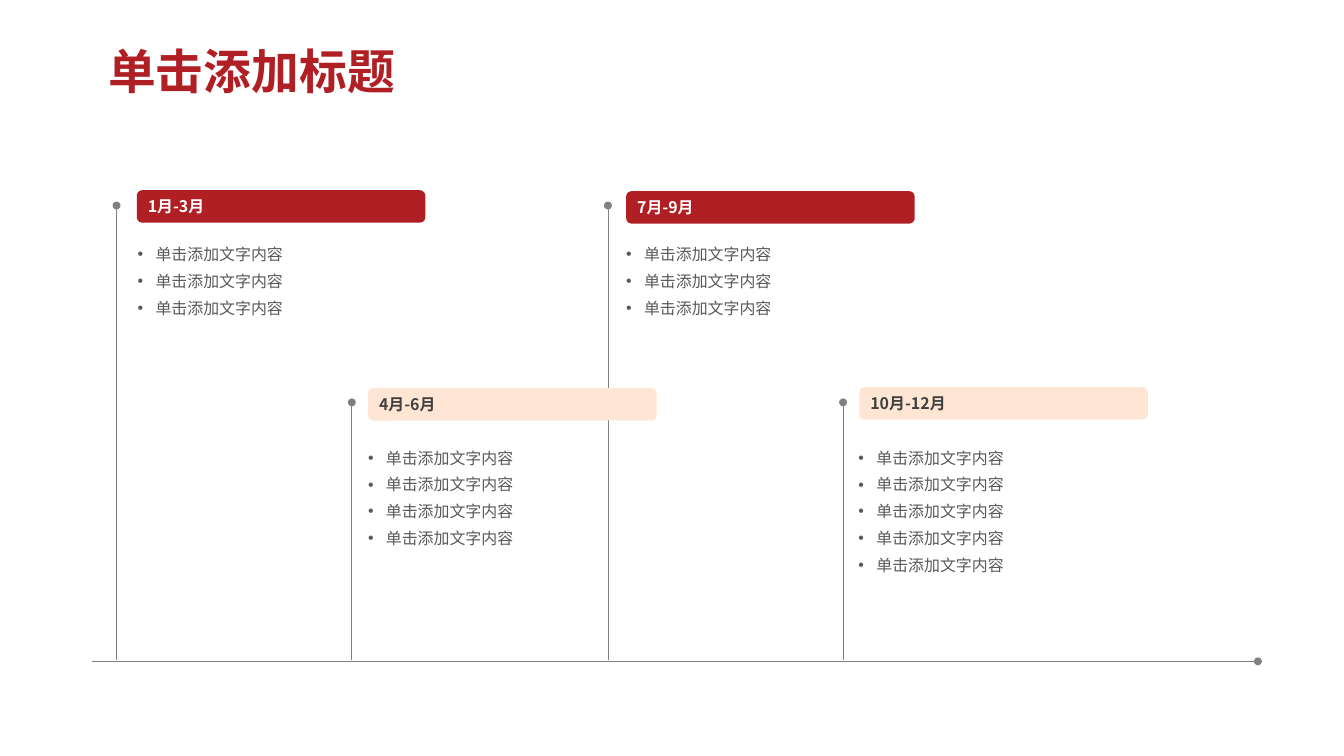
from dataclasses import dataclass

from lxml.etree import SubElement
from pptx import Presentation
from pptx.dml.color import RGBColor
from pptx.enum.shapes import MSO_CONNECTOR, MSO_SHAPE
from pptx.enum.text import MSO_ANCHOR, MSO_AUTO_SIZE, PP_ALIGN
from pptx.oxml.ns import qn
from pptx.util import Pt

FONT = "Noto Sans CJK SC"
RED, PEACH, WHITE = "B01F24", "FFE6D4", "FFFFFF"
DARK, BODY, GREY = "404040", "595959", "808080"
ITEM = "单击添加文字内容"
AXIS_Y, STEM_BOTTOM = 498.2, 497.5
BAR_W, BAR_H = 217.4, 24.5
LINE_H, INDENT = 24, 13.5


@dataclass(frozen=True)
class Quarter:
    label: str
    items: int
    stem_x: float
    stem_top: float
    bar_x: float
    bar_y: float
    list_x: float
    list_y: float
    fill: str
    ink: str


QUARTERS = [
    Quarter("1月-3月", 3, 87.8, 154.8, 103, 143.3, 96.5, 175, RED, WHITE),
    Quarter("4月-6月", 4, 265, 303.1, 277.2, 292.3, 270, 328.3, PEACH, DARK),
    Quarter("7月-9月", 3, 457.9, 154.8, 471.6, 144, 464.4, 175, RED, WHITE),
    Quarter("10月-12月", 5, 635, 303.1, 647.3, 291.6, 639.4, 328.3, PEACH, DARK),
]


def colour(hex_code: str) -> RGBColor:
    return RGBColor.from_string(hex_code)


def place(sp, x: float, y: float, w: float, h: float) -> None:
    sp.left, sp.top, sp.width, sp.height = Pt(x), Pt(y), Pt(w), Pt(h)


def add_run(p, text: str, size: float, ink: str, bold: bool) -> None:
    r = p.add_run()
    r.text = text
    r.font.size = Pt(size)
    r.font.bold = bold
    r.font.color.rgb = colour(ink)
    r.font.name = FONT
    SubElement(r.font._element, qn("a:ea"), typeface=FONT)


def add_line(slide, start: tuple, end: tuple, width: float, dot: str) -> None:
    """Draw a grey line with a round dot at its headEnd or tailEnd."""
    line = slide.shapes.add_connector(
        MSO_CONNECTOR.STRAIGHT, *(Pt(v) for v in start + end))
    line.line.color.rgb = colour(GREY)
    line.line.width = Pt(width)
    SubElement(line.line._get_or_add_ln(), qn(f"a:{dot}"), type="oval")
    SubElement(line._element.spPr, qn("a:effectLst"))


def add_bar(slide, q: Quarter) -> None:
    sp = slide.shapes.add_shape(
        MSO_SHAPE.ROUNDED_RECTANGLE,
        Pt(q.bar_x), Pt(q.bar_y), Pt(BAR_W), Pt(BAR_H))
    sp.shadow.inherit = False
    sp.fill.solid()
    sp.fill.fore_color.rgb = colour(q.fill)
    sp.line.fill.background()
    tf = sp.text_frame
    tf.word_wrap = True
    tf.vertical_anchor = MSO_ANCHOR.TOP
    p = tf.paragraphs[0]
    p.alignment = PP_ALIGN.LEFT
    add_run(p, q.label, 12, q.ink, True)


def fill_list(sp, q: Quarter) -> None:
    place(sp, q.list_x, q.list_y, 130, q.items * LINE_H)
    tf = sp.text_frame
    tf.word_wrap = True
    tf.auto_size = MSO_AUTO_SIZE.NONE
    tf.vertical_anchor = MSO_ANCHOR.TOP
    for i in range(q.items):
        p = tf.paragraphs[0] if i == 0 else tf.add_paragraph()
        pPr = p._p.get_or_add_pPr()
        pPr.set("marL", str(Pt(INDENT)))
        pPr.set("indent", str(-Pt(INDENT)))
        SubElement(pPr, qn("a:buFont"), typeface="Arial")
        SubElement(pPr, qn("a:buChar"), char="•")
        p.alignment = PP_ALIGN.LEFT
        p.line_spacing = 1.4
        p.space_before = Pt(0)
        add_run(p, ITEM, 12, BODY, False)


def fill_title(sp, text: str) -> None:
    place(sp, 81.4, 31, 249, 44)
    tf = sp.text_frame
    tf.margin_left = tf.margin_right = tf.margin_top = tf.margin_bottom = 0
    tf.word_wrap = True
    tf.auto_size = MSO_AUTO_SIZE.NONE
    tf.vertical_anchor = MSO_ANCHOR.MIDDLE
    p = tf.paragraphs[0]
    p.alignment = PP_ALIGN.LEFT
    add_run(p, text, 36, RED, True)


def main() -> None:
    prs = Presentation()
    prs.slide_width, prs.slide_height = Pt(1012.32), Pt(569.52)
    # The comparison layout has a title and four body placeholders
    slide = prs.slides.add_slide(prs.slide_layouts[4])

    # Title and quarterly lists
    title, *bodies = slide.placeholders
    fill_title(title, "单击添加标题")
    for sp, q in zip(bodies, QUARTERS):
        fill_list(sp, q)

    # Time axis and stems, behind the bars
    add_line(slide, (69.1, AXIS_Y), (947.5, AXIS_Y), 0.75, "tailEnd")
    for q in QUARTERS:
        add_line(slide, (q.stem_x, q.stem_top), (q.stem_x, STEM_BOTTOM),
                 0.5, "headEnd")

    # Quarter bars
    for q in QUARTERS:
        add_bar(slide, q)

    prs.save("out.pptx")


if __name__ == "__main__":
    main()
